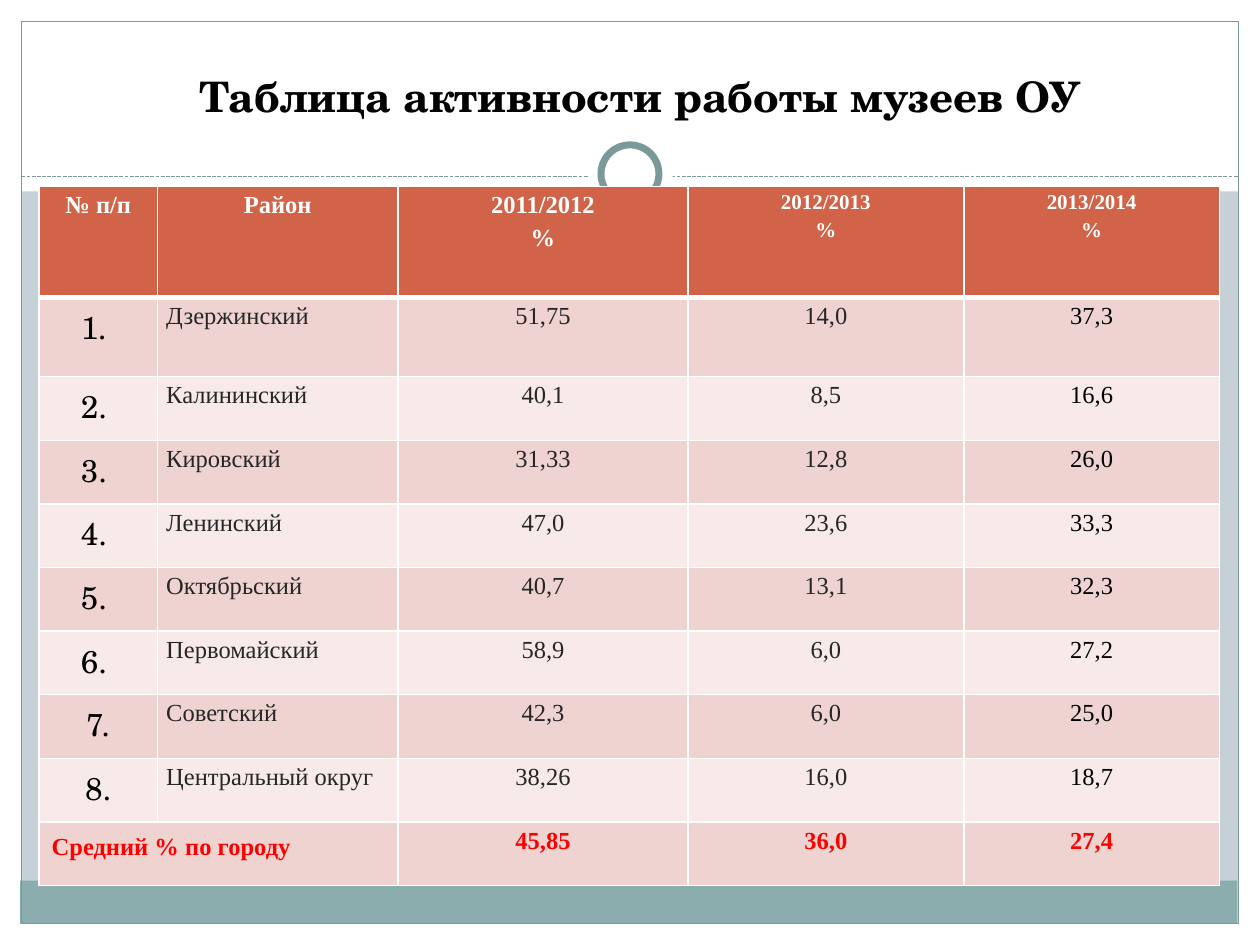
from lxml.etree import SubElement
from pptx import Presentation
from pptx.dml.color import RGBColor
from pptx.enum.dml import MSO_LINE
from pptx.enum.shapes import MSO_CONNECTOR, MSO_SHAPE
from pptx.enum.text import MSO_ANCHOR, MSO_AUTO_SIZE, PP_ALIGN
from pptx.oxml import parse_xml
from pptx.oxml.ns import nsdecls, qn
from pptx.util import Inches, Pt

WHITE = RGBColor(0xFF, 0xFF, 0xFF)
BLACK = RGBColor(0, 0, 0)
DARK = RGBColor(0x26, 0x26, 0x26)
RED = RGBColor(0xFF, 0, 0)
BACK = RGBColor(0xC5, 0xD1, 0xD7)
TEAL = RGBColor(0x8C, 0xAD, 0xAE)
EDGE = RGBColor(0x7C, 0x99, 0x9A)
RUST = RGBColor(0xD1, 0x63, 0x49)
BANDS = RGBColor(0xEE, 0xD3, 0xD0), RGBColor(0xF7, 0xEA, 0xE9)
SERIF = "Times New Roman"
SCHOLA = "TeX Gyre Schola"

WIDTHS = [0.94, 1.91, 2.3, 2.19, 2.03]
HEIGHTS = [0.88, 0.63] + [0.505] * 8
HEADS = ["№ п/п", "Район", "2011/2012\n%", "2012/2013\n%", "2013/2014\n%"]
ROWS = [
    ("1. ", "Дзержинский", "51,75", "14,0", "37,3"),
    ("2. ", "Калининский", "40,1", "8,5", "16,6"),
    ("3. ", "Кировский", "31,33", "12,8", "26,0"),
    ("4. ", "Ленинский", "47,0", "23,6", "33,3"),
    ("5. ", "Октябрьский", "40,7", "13,1", "32,3"),
    ("6. ", "Первомайский", "58,9", "6,0", "27,2"),
    ("7.", "Советский", "42,3", "6,0", "25,0"),
    ("8.", "Центральный округ", "38,26", "16,0", "18,7"),
]
MEANS = ["45,85", "36,0", "27,4"]


def add_shape(slide, kind, box, fill=None, line=None, width=0.75):
    shape = slide.shapes.add_shape(kind, *map(Inches, box))
    shape.shadow.inherit = False
    if fill is None:
        shape.fill.background()
    else:
        shape.fill.solid()
        shape.fill.fore_color.rgb = fill
    if line is None:
        shape.line.fill.background()
    else:
        shape.line.color.rgb = line
        shape.line.width = Pt(width)


def add_rule(slide, left, right, top):
    ends = map(Inches, (left, top, right, top))
    rule = slide.shapes.add_connector(MSO_CONNECTOR.STRAIGHT, *ends)
    rule.line.color.rgb = EDGE
    rule.line.width = Pt(0.75)
    rule.line.dash_style = MSO_LINE.SQUARE_DOT
    SubElement(rule._element.spPr, qn("a:effectLst"))


def add_frame(slide):
    """Draw the white margins, bottom band, outline and ring."""
    rect, oval = MSO_SHAPE.RECTANGLE, MSO_SHAPE.OVAL
    for box in ((0, 7.33, 10, 0.17), (0, 0, 10, 1.52),
                (0, 0, 0.17, 7.5), (9.83, 0, 0.17, 7.5)):
        add_shape(slide, rect, box, WHITE)
    add_shape(slide, rect, (0.16, 6.99, 9.66, 0.34), TEAL)
    add_shape(slide, rect, (0.17, 0.17, 9.66, 7.16), line=EDGE)
    add_rule(slide, 0.17, 9.83, 1.4)
    add_shape(slide, oval, (4.67, 1.05, 0.67, 0.67), WHITE)
    add_shape(slide, oval, (4.77, 1.15, 0.46, 0.46), WHITE, EDGE, 4)


def set_font(para, size, color, bold=False, name=SERIF):
    font = para.font
    font.size, font.bold, font.name = Pt(size), bold, name
    font.color.rgb = color


def set_title(slide, text):
    title = slide.shapes.title
    title.left, title.top = Inches(1.25), Inches(0.51)
    title.width, title.height = Inches(7.66), Inches(0.5)
    frame = title.text_frame
    frame.text = text
    frame.word_wrap = True
    frame.auto_size = MSO_AUTO_SIZE.SHAPE_TO_FIT_TEXT
    frame.vertical_anchor = MSO_ANCHOR.TOP
    para = frame.paragraphs[0]
    para.alignment = PP_ALIGN.CENTER
    set_font(para, 24, BLACK, True, SCHOLA)
    # Bring the title in front of the white margins.
    slide.shapes._spTree.append(title._element)


def style_cell(cell, fill, base=1):
    props = cell._tc.get_or_add_tcPr()
    for side, width in zip("LRTB", (1, 1, 1, base)):
        props.append(parse_xml(
            f'<a:ln{side} {nsdecls("a")} w="{Pt(width)}"><a:solidFill>'
            f'<a:srgbClr val="{WHITE}"/></a:solidFill></a:ln{side}>'))
    cell.fill.solid()
    cell.fill.fore_color.rgb = fill


def set_text(cell, text, size=14, color=DARK, bold=False,
             align=PP_ALIGN.CENTER, tight=True):
    cell.text = text
    if tight:
        cell.margin_left = cell.margin_right = Inches(0.07)
        cell.margin_top = cell.margin_bottom = 0
    for para in cell.text_frame.paragraphs:
        para.alignment = align
        para.line_spacing = 1.2
        set_font(para, size, color, bold)


def set_number(cell, text):
    cell.text = text
    para = cell.text_frame.paragraphs[0]
    para.alignment = PP_ALIGN.CENTER
    set_font(para, 18, BLACK, name=SCHOLA)
    props = para._p.get_or_add_pPr()
    props.set("marL", str(Inches(0.38)))
    props.set("indent", str(-Inches(0.38)))


def add_grid(slide):
    box = map(Inches, (0.31, 1.48, sum(WIDTHS), sum(HEIGHTS)))
    grid = slide.shapes.add_table(len(HEIGHTS), len(WIDTHS), *box).table
    grid.horz_banding = False
    for col, width in zip(grid.columns, WIDTHS):
        col.width = Inches(width)
    for i, (row, height) in enumerate(zip(grid.rows, HEIGHTS)):
        row.height = Inches(height)
        for cell in row.cells:
            if i == 0:
                style_cell(cell, RUST, 3)
            else:
                style_cell(cell, BANDS[(i - 1) % 2])

    for j, head in enumerate(HEADS):
        set_text(grid.cell(0, j), head, 14 if j < 3 else 12, WHITE, True)
    for i, (number, area, *rates) in enumerate(ROWS, 1):
        set_number(grid.cell(i, 0), number)
        set_text(grid.cell(i, 1), area, align=PP_ALIGN.LEFT)
        for j, (rate, color) in enumerate(zip(rates, (DARK, DARK, BLACK)), 2):
            set_text(grid.cell(i, j), rate, color=color)

    last = len(HEIGHTS) - 1
    label = grid.cell(last, 0)
    label.merge(grid.cell(last, 1))
    set_text(label, "Средний % по городу", color=RED, bold=True,
             align=PP_ALIGN.LEFT, tight=False)
    for j, mean in enumerate(MEANS, 2):
        set_text(grid.cell(last, j), mean, color=RED, bold=True)


def main():
    deck = Presentation()
    deck.slide_width, deck.slide_height = Inches(10), Inches(7.5)
    slide = deck.slides.add_slide(deck.slide_layouts[5])
    slide.background.fill.solid()
    slide.background.fill.fore_color.rgb = BACK
    add_frame(slide)
    add_grid(slide)
    set_title(slide, "Таблица активности работы музеев ОУ")
    deck.save("out.pptx")


if __name__ == "__main__":
    main()
